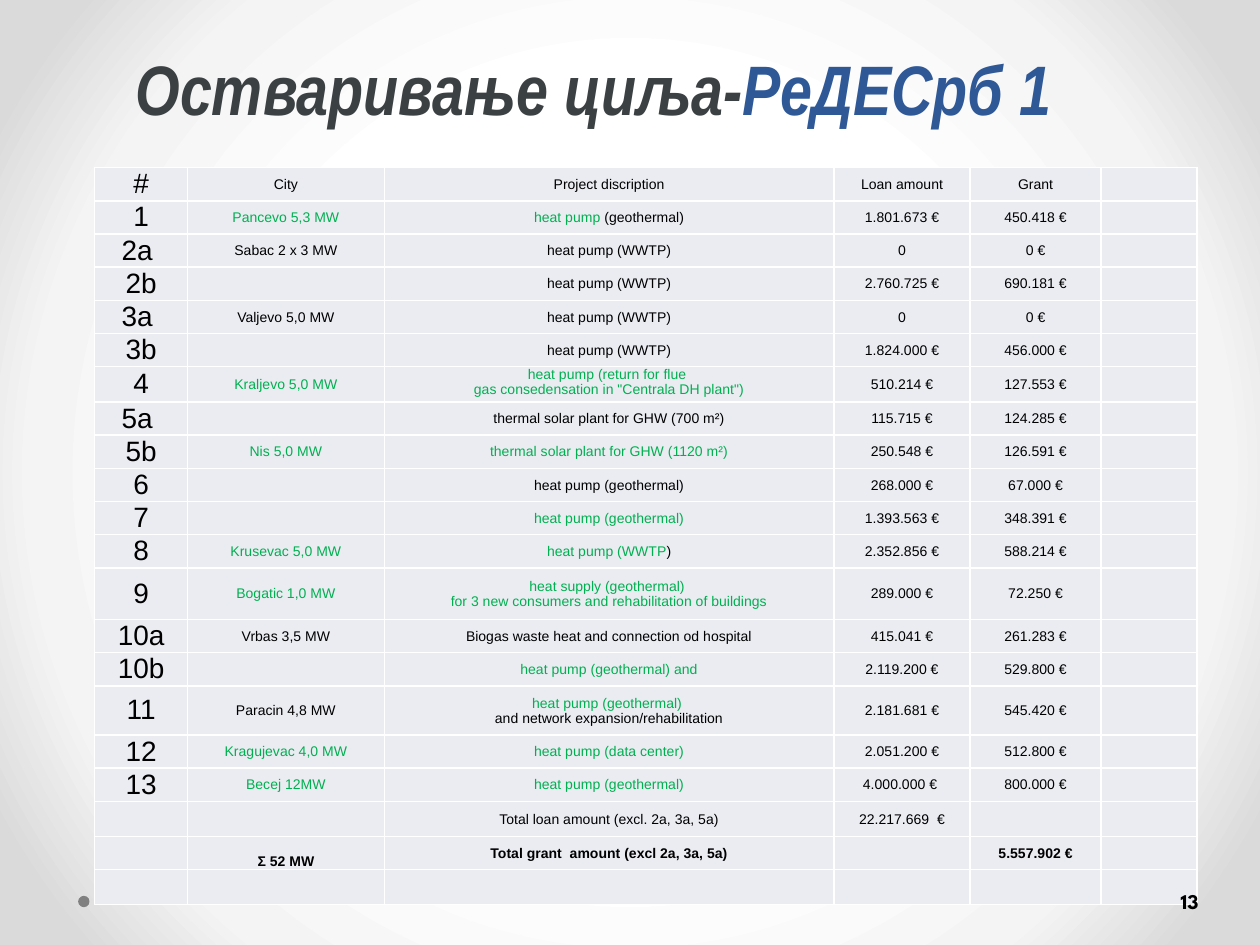
from pptx import Presentation
from pptx.dml.color import RGBColor as RGB
from pptx.enum.shapes import MSO_SHAPE as SHAPE
from pptx.enum.text import MSO_ANCHOR as ANCHOR, PP_ALIGN as ALIGN
from pptx.oxml import parse_xml
from pptx.oxml.ns import nsdecls
from pptx.util import Inches, Pt

COLORS = {"title": "3B4042", "accent": "2F5897", "text": "000000",
          "done": "00B050", "cell": "EAECF2", "border": "FFFFFF", "dot": "808080"}
BACKGROUND = {50: "FFFFFF", 76: "F4F4F4", 92: "DADADA"}

COLS = [0.74, 1.56, 3.57, 1.08, 1.04, 0.76]
ROW_H = 0.26
TALL_ROWS = {6: 0.28, 12: 0.41, 15: 0.39, 18: 0.28, 20: 0.28}
TOTAL_ROW = 19

# Text between bars is green.
ROWS = [
    ("#", "City", "Project discription", "Loan amount", "Grant"),
    ("1", "|Pancevo 5,3 MW|", "|heat pump |(geothermal)", "1.801.673 €", "450.418 €"),
    ("2a ", "Sabac 2 x 3 MW", "heat pump (WWTP)", "0", "0 €"),
    ("2b", "", "heat pump (WWTP)", "2.760.725 €", "690.181 €"),
    ("3a ", "Valjevo 5,0 MW", "heat pump (WWTP)", "0", "0 €"),
    ("3b", "", "heat pump (WWTP)", "1.824.000 €", "456.000 €"),
    ("4", "|Kraljevo 5,0 MW|",
     '|heat pump (return for flue \ngas consedensation in "Centrala DH plant")|',
     "510.214 €", "127.553 €"),
    ("5a ", "", "thermal solar plant for GHW (700 m²)", "115.715 €", "124.285 €"),
    ("5b", "|Nis 5,0 MW|", "|thermal solar plant for GHW (1120 m²)|",
     "250.548 €", "126.591 €"),
    ("6", "", "heat pump (geothermal)", "268.000 €", "67.000 €"),
    ("7", "", "|heat pump (geothermal)|", "1.393.563 €", "348.391 €"),
    ("8", "|Krusevac 5,0 MW|", "|heat pump (WWTP|)", "2.352.856 €", "588.214 €"),
    ("9", "|Bogatic 1,0 MW|",
     "|heat supply (geothermal) \nfor 3 new consumers and rehabilitation of buildings|",
     "289.000 €", "72.250 €"),
    ("10a", "Vrbas 3,5 MW", "Biogas waste heat and connection od hospital",
     "415.041 €", "261.283 €"),
    ("10b", "", "|heat pump (geothermal) and|", "2.119.200 €", "529.800 €"),
    ("11", "Paracin 4,8 MW",
     "|heat pump (geothermal) \n|and network expansion/rehabilitation",
     "2.181.681 €", "545.420 €"),
    ("12", "|Kragujevac 4,0 MW|", "|heat pump (data center)|", "2.051.200 €", "512.800 €"),
    ("13", "|Becej 12MW|", "|heat pump (geothermal)|", "4.000.000 € ", "800.000 €"),
    ("", "", "Total loan amount (excl. 2a, 3a, 5a)", "22.217.669  €", ""),
    ("", "Σ 52 MW", "Total grant  amount (excl 2a, 3a, 5a)", "", "5.557.902 €"),
    ("", "", "", "", ""),
]


def add_run(p, text, font, size, color, bold=None, italic=None):
    """Add text to a paragraph, one run per line."""
    for i, line in enumerate(text.split("\n")):
        if i:
            p.add_line_break()
        if line:
            r = p.add_run()
            r.text = line
            r.font.name, r.font.size = font, Pt(size)
            r.font.bold, r.font.italic = bold, italic
            r.font.color.rgb = RGB.from_string(COLORS[color])


def add_borders(cell):
    tc_pr = cell._tc.get_or_add_tcPr()
    for i, side in enumerate(("lnL", "lnR", "lnT", "lnB")):
        tc_pr.insert(i, parse_xml(
            f'<a:{side} {nsdecls("a")} w="12700"><a:solidFill>'
            f'<a:srgbClr val="{COLORS["border"]}"/></a:solidFill></a:{side}>'))


prs = Presentation()
prs.slide_width, prs.slide_height = Inches(10), Inches(7.5)
s = prs.slides.add_slide(prs.slide_layouts[6])

# Radial background
stops = "".join(f'<a:gs pos="{pos * 1000}"><a:srgbClr val="{c}"/></a:gs>'
                for pos, c in BACKGROUND.items())
s._element.cSld.insert(0, parse_xml(
    f'<p:bg {nsdecls("p", "a")}><p:bgPr><a:gradFill rotWithShape="1">'
    f'<a:gsLst>{stops}</a:gsLst><a:path path="circle">'
    '<a:fillToRect l="50000" t="50000" r="50000" b="50000"/></a:path>'
    '</a:gradFill><a:effectLst/></p:bgPr></p:bg>'))

# Footer dot
dot = s.shapes.add_shape(SHAPE.OVAL, Inches(0.62), Inches(7.11), Inches(0.09), Inches(0.09))
dot.shadow.inherit = False
dot.fill.solid()
dot.fill.fore_color.rgb = RGB.from_string(COLORS["dot"])
dot.line.fill.background()

# Title
tf = s.shapes.add_textbox(Inches(0.08), Inches(0.16), Inches(9.26), Inches(0.92)).text_frame
tf.word_wrap = True
tf.vertical_anchor = ANCHOR.BOTTOM
p = tf.paragraphs[0]
p.alignment, p.line_spacing = ALIGN.CENTER, Pt(58)
add_run(p, "Остваривање циља-", "Arial Narrow", 40, "title", True, True)
add_run(p, "РеДЕСрб 1", "Arial Narrow", 40, "accent", True, True)

# Project table
heights = [TALL_ROWS.get(i, ROW_H) for i in range(len(ROWS))]
table = s.shapes.add_table(len(ROWS), len(COLS), Inches(0.75), Inches(1.33),
                           Inches(sum(COLS)), Inches(sum(heights))).table
for col, width in zip(table.columns, COLS):
    col.width = Inches(width)
for i, (height, values) in enumerate(zip(heights, ROWS)):
    table.rows[i].height = Inches(height)
    for j in range(len(COLS)):
        cell = table.cell(i, j)
        cell.fill.solid()
        cell.fill.fore_color.rgb = RGB.from_string(COLORS["cell"])
        add_borders(cell)
        cell.margin_left = cell.margin_right = cell.margin_top = Inches(0.01)
        cell.margin_bottom = 0
        cell.vertical_anchor = ANCHOR.MIDDLE
        p = cell.text_frame.paragraphs[0]
        p.alignment, p.line_spacing = ALIGN.CENTER, 0.95
        text = values[j] if j < len(values) else ""
        for k, part in enumerate(text.split("|")):
            add_run(p, part, "Arial", 8 if j else 16, "done" if k % 2 else "text",
                    i == TOTAL_ROW)
        if not text:
            p._p.get_or_add_endParaRPr().set("sz", "800")
table.cell(6, 2).vertical_anchor = ANCHOR.TOP
table.cell(TOTAL_ROW, 1).vertical_anchor = ANCHOR.BOTTOM

# Slide number
tf = s.shapes.add_textbox(Inches(9.34), Inches(6.95), Inches(0.61), Inches(0.4)).text_frame
tf.word_wrap = True
tf.vertical_anchor = ANCHOR.MIDDLE
tf.margin_left = Inches(0.03)
tf.margin_right = Inches(0.05)
add_run(tf.paragraphs[0], "13", "League Spartan", 12, "text", True)

prs.save("out.pptx")
